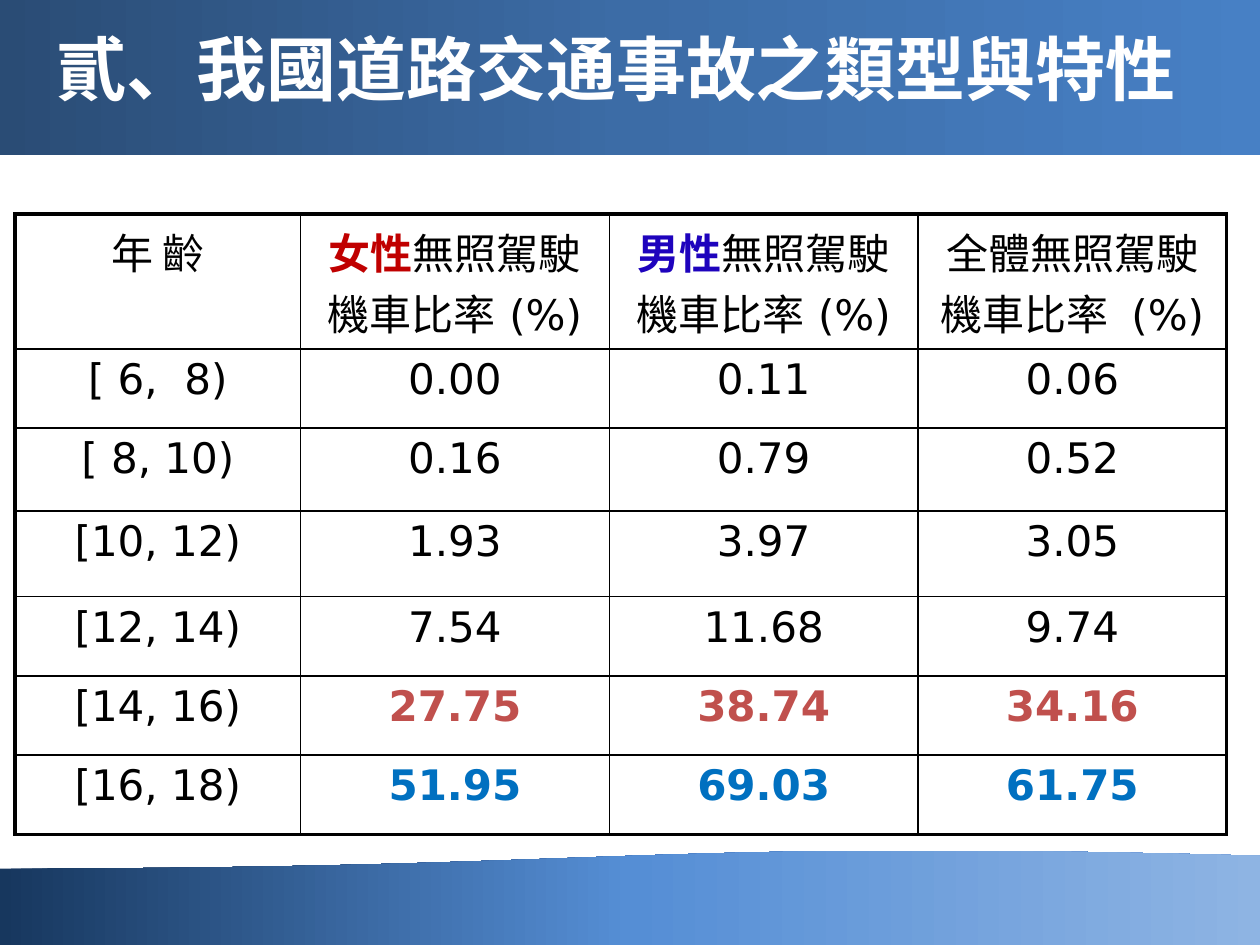
"""Build a slide with a table of unlicensed riding rates by age."""
import copy
from dataclasses import dataclass
import lxml.etree
import pptx
import pptx.dml.color
import pptx.enum.shapes
import pptx.enum.text
import pptx.oxml.ns
import pptx.util

Pt = pptx.util.Pt
qn = pptx.oxml.ns.qn
Kind = pptx.enum.shapes.MSO_SHAPE
Align = pptx.enum.text.PP_ALIGN
CJK, LATIN = "Noto Sans CJK SC", "DejaVu Sans"
BLACK, RED, BLUE = "000000", "C0504D", "0070C0"
THIN, THICK = 1, 2.25


@dataclass
class Band:
    kind: int
    top: float
    height: float
    turn: int
    hues: tuple


@dataclass
class Piece:
    text: str
    face: str = CJK
    hue: str = BLACK
    bold: bool = False


@dataclass
class Row:
    age: str
    rates: tuple
    height: float
    hue: str = BLACK
    bold: bool = False


BANDS = [
    Band(Kind.FLOWCHART_DOCUMENT, 485.3, 55.4, 180, ("17375E", "558ED5", "8EB4E3")),
    Band(Kind.RECTANGLE, 0, 88.6, 0, ("2A4C75", "3C6CA6", "4780C5")),
]
UNIT = Piece(" (%)", LATIN)
RIDE = Piece("無照駕駛機車比率")
HEADS = [
    [Piece("年 齡")],
    [Piece("女性", hue="C00000", bold=True), RIDE, UNIT],
    [Piece("男性", hue="1E03BD", bold=True), RIDE, UNIT],
    [Piece("全體無照駕駛機車比率 "), UNIT],
]
ROWS = [
    Row("[ 6,  8)", ("0.00", "0.11", "0.06"), 45.3),
    Row("[ 8, 10)", ("0.16", "0.79", "0.52"), 47.3),
    Row("[10, 12)", ("1.93", "3.97", "3.05"), 49),
    Row("[12, 14)", ("7.54", "11.68", "9.74"), 45.3),
    Row("[14, 16)", ("27.75", "38.74", "34.16"), 45.3, RED, True),
    Row("[16, 18)", ("51.95", "69.03", "61.75"), 45.3, BLUE, True),
]


def color(hue: str) -> pptx.dml.color.RGBColor:
    return pptx.dml.color.RGBColor.from_string(hue)


def style(font, face: str, hue: str, bold: bool) -> None:
    font.name = face
    font.bold = bold
    font.fill.solid()
    font.fill.fore_color.rgb = color(hue)
    east = lxml.etree.Element(qn("a:ea"), typeface=face)
    font._rPr.find(qn("a:latin")).addnext(east)


def draw_band(slide, band: Band, width: int) -> None:
    shape = slide.shapes.add_shape(band.kind, 0, Pt(band.top), width, Pt(band.height))
    shape.rotation = band.turn
    shape.shadow.inherit = False
    shape.line.fill.background()
    shape.fill.gradient()
    shape.fill.gradient_angle = band.turn
    stops = shape._element.spPr.find(".//" + qn("a:gsLst"))
    stops.insert(1, copy.deepcopy(stops[0]))
    for i, (stop, hue) in enumerate(zip(shape.fill.gradient_stops, band.hues)):
        stop.position = i / 2
        stop.color.rgb = color(hue)
    slide.shapes._spTree.insert(2, shape._element)


def draw_edges(cell, widths: dict) -> None:
    props = cell._tc.get_or_add_tcPr()
    for i, (side, width) in enumerate(widths.items()):
        line = lxml.etree.Element(qn("a:ln" + side), w=str(Pt(width)))
        fill = lxml.etree.SubElement(line, qn("a:solidFill"))
        lxml.etree.SubElement(fill, qn("a:srgbClr"), val=BLACK)
        props.insert(i, line)


def write(cell, pieces: list) -> None:
    para = cell.text_frame.paragraphs[0]
    para.alignment = Align.CENTER
    para.font.size = Pt(24)
    for piece in pieces:
        run = para.add_run()
        run.text = piece.text
        if len(pieces) > 1:
            style(run.font, piece.face, piece.hue, piece.bold)
    if len(pieces) == 1:
        style(para.font, pieces[0].face, pieces[0].hue, pieces[0].bold)


def draw_table(slide) -> None:
    grid = [HEADS] + [
        [[Piece(row.age, LATIN)]]
        + [[Piece(rate, LATIN, row.hue, row.bold)] for rate in row.rates]
        for row in ROWS
    ]
    wide = [163.2] + [176.4] * 3
    tall = [77] + [row.height for row in ROWS]
    frame = slide.shapes.add_table(
        len(tall), len(wide), Pt(8.6), Pt(122.4), Pt(sum(wide)), Pt(sum(tall)))
    table = frame.table
    table.first_row = table.horz_banding = False
    for col, width in zip(table.columns, wide):
        col.width = Pt(width)
    for r, (line, height) in enumerate(zip(grid, tall)):
        table.rows[r].height = Pt(height)
        for c, pieces in enumerate(line):
            cell = table.cell(r, c)
            cell.fill.background()
            write(cell, pieces)
            draw_edges(cell, {
                "L": THICK if c == 0 else THIN,
                "R": THICK if c == len(wide) - 1 else THIN,
                "T": THICK if r == 0 else THIN,
                "B": THICK if r == len(tall) - 1 else THIN,
            })


def draw_title(slide) -> None:
    title = slide.shapes.title
    title.left, title.top, title.width, title.height = Pt(25.2), Pt(0), Pt(674.6), Pt(77)
    title.text_frame.text = "貳、我國道路交通事故之類型與特性"
    title.text_frame.vertical_anchor = pptx.enum.text.MSO_ANCHOR.MIDDLE
    para = title.text_frame.paragraphs[0]
    para.alignment = Align.LEFT
    para.font.size = Pt(40)
    style(para.font, CJK, "FFFFFF", True)


def main() -> None:
    deck = pptx.Presentation()
    deck.slide_width, deck.slide_height = Pt(720), Pt(540)
    slide = deck.slides.add_slide(deck.slide_layouts[5])
    draw_title(slide)
    for band in BANDS:
        draw_band(slide, band, deck.slide_width)
    draw_table(slide)
    deck.save("out.pptx")


if __name__ == "__main__":
    main()
